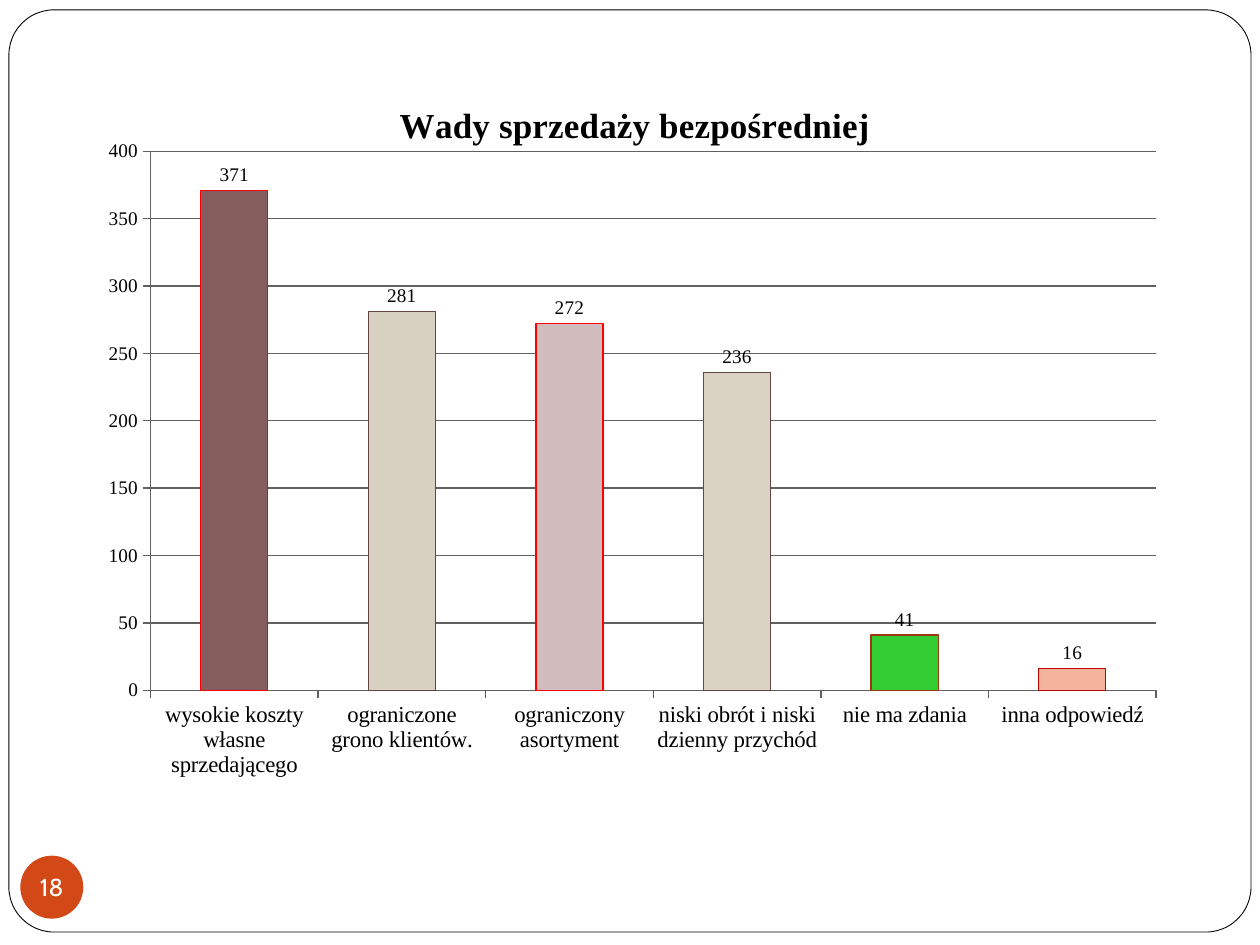
from dataclasses import dataclass

from lxml import etree
from pptx import Presentation
from pptx.chart.data import CategoryChartData
from pptx.dml.color import RGBColor
from pptx.enum.chart import XL_CHART_TYPE, XL_LABEL_POSITION, XL_TICK_MARK
from pptx.enum.shapes import MSO_SHAPE
from pptx.enum.text import MSO_ANCHOR, PP_ALIGN
from pptx.oxml.ns import qn
from pptx.util import Cm, Pt

COLUMN = XL_CHART_TYPE.COLUMN_CLUSTERED
OUTSIDE_END = XL_LABEL_POSITION.OUTSIDE_END
TICK_OUT, TICK_NONE = XL_TICK_MARK.OUTSIDE, XL_TICK_MARK.NONE
ROUND_RECT, OVAL = MSO_SHAPE.ROUNDED_RECTANGLE, MSO_SHAPE.OVAL
MIDDLE, CENTER = MSO_ANCHOR.MIDDLE, PP_ALIGN.CENTER


@dataclass(frozen=True)
class Theme:
    white: str = "FFFFFF"
    black: str = "000000"
    accent: str = "D34817"
    grid: str = "606060"
    font: str = "Times New Roman"
    badge_font: str = "Cabin"
    label_size: int = 11
    category_size: int = 13
    badge_size: int = 14
    title_size: int = 20


THEME = Theme()
TITLE = "Wady sprzedaży bezpośredniej"
DRAWBACKS = [
    ("wysokie koszty własne sprzedającego", 371, "855D5D", "FF0000"),
    ("ograniczone grono klientów.", 281, "D8D0C0", "634545"),
    ("ograniczony asortyment", 272, "D0BCBC", "FF0000"),
    ("niski obrót i niski dzienny przychód", 236, "DAD2C3", "634545"),
    ("nie ma zdania", 41, "33CC33", "9E3611"),
    ("inna odpowiedź", 16, "F4B39B", "C00000"),
]
PLOT_BOX = {"x": 0.052, "y": 0.102, "w": 0.93, "h": 0.724}


def apply(target, values):
    for name, value in values.items():
        setattr(target, name, value)


def style_font(font, size, color=THEME.black, name=THEME.font, bold=False):
    apply(font, {"size": Pt(size), "name": name, "bold": bold})
    font.color.rgb = RGBColor.from_string(color)


def paint(fill, color):
    fill.solid()
    fill.fore_color.rgb = RGBColor.from_string(color)


def stroke(line, color, width):
    paint(line.fill, color)
    line.width = Pt(width)


def add_frame(s, x, y, w, h):
    sp = s.shapes.add_shape(ROUND_RECT, x, y, w, h)
    sp.adjustments[0] = 0.049
    sp.shadow.inherit = False
    paint(sp.fill, THEME.white)
    stroke(sp.line, THEME.black, 0.5)


def add_badge(s, x, y, size, number):
    sp = s.shapes.add_shape(OVAL, x, y, size, size)
    sp.shadow.inherit = False
    paint(sp.fill, THEME.accent)
    sp.line.fill.background()
    tf = sp.text_frame
    apply(tf, {"margin_left": 0, "margin_top": 0, "margin_right": 0, "margin_bottom": 0,
               "word_wrap": False, "vertical_anchor": MIDDLE})
    p = tf.paragraphs[0]
    p.alignment = CENTER
    r = p.add_run()
    r.text = number
    style_font(r.font, THEME.badge_size, THEME.white, THEME.badge_font)


def place_plot(chart, box):
    area = chart._chartSpace.chart.plotArea
    for old in area.findall(qn("c:layout")):
        area.remove(old)
    layout = etree.Element(qn("c:layout"))
    manual = etree.SubElement(layout, qn("c:manualLayout"))
    settings = {"layoutTarget": "inner", "xMode": "edge", "yMode": "edge", **box}
    for tag, value in settings.items():
        etree.SubElement(manual, qn(f"c:{tag}")).set("val", str(value))
    area.insert(0, layout)


def style_axes(chart):
    sizes = ((chart.category_axis, THEME.category_size), (chart.value_axis, THEME.label_size))
    for axis, size in sizes:
        apply(axis, {"major_tick_mark": TICK_OUT, "minor_tick_mark": TICK_NONE})
        style_font(axis.tick_labels.font, size)
        stroke(axis.format.line, THEME.grid, 0.75)
    axis = chart.value_axis
    apply(axis, {"minimum_scale": 0, "maximum_scale": 400, "major_unit": 50,
                 "has_major_gridlines": True})
    stroke(axis.major_gridlines.format.line, THEME.grid, 0.75)
    apply(axis.tick_labels, {"number_format": "0", "number_format_is_linked": False})


def add_drawbacks_chart(s, x, y, w, h):
    names, values, fills, edges = zip(*DRAWBACKS)
    data = CategoryChartData(number_format="0")
    data.categories = names
    data.add_series("Series 1", values)
    chart = s.shapes.add_chart(COLUMN, x, y, w, h, data).chart
    apply(chart, {"has_legend": False, "has_title": True})
    style_font(chart.font, THEME.label_size)
    tf = chart.chart_title.text_frame
    tf.text = TITLE
    style_font(tf.paragraphs[0].runs[0].font, THEME.title_size, bold=True)
    chart.chart_title.include_in_layout = False
    place_plot(chart, PLOT_BOX)
    style_axes(chart)

    plot = chart.plots[0]
    apply(plot, {"gap_width": 150, "vary_by_categories": False, "has_data_labels": True})
    labels = plot.data_labels
    apply(labels, {"show_value": True, "position": OUTSIDE_END,
                   "number_format": "0", "number_format_is_linked": False})
    style_font(labels.font, THEME.label_size)
    series = plot.series[0]
    paint(series.format.fill, THEME.accent)
    for i, (fill, edge) in enumerate(zip(fills, edges)):
        bar = series.points[i].format
        paint(bar.fill, fill)
        stroke(bar.line, edge, 0.75)


def main():
    prs = Presentation()
    apply(prs, {"slide_width": Cm(25.4), "slide_height": Cm(19.05)})
    s = prs.slides.add_slide(prs.slide_layouts[6])
    add_frame(s, Cm(0.18), Cm(0.2), Cm(25.04), Cm(18.59))
    add_badge(s, Cm(0.41), Cm(17.25), Cm(1.27), "18")
    add_drawbacks_chart(s, Cm(1.9), Cm(1.52), Cm(21.8), Cm(15.01))
    prs.save("out.pptx")


if __name__ == "__main__":
    main()
